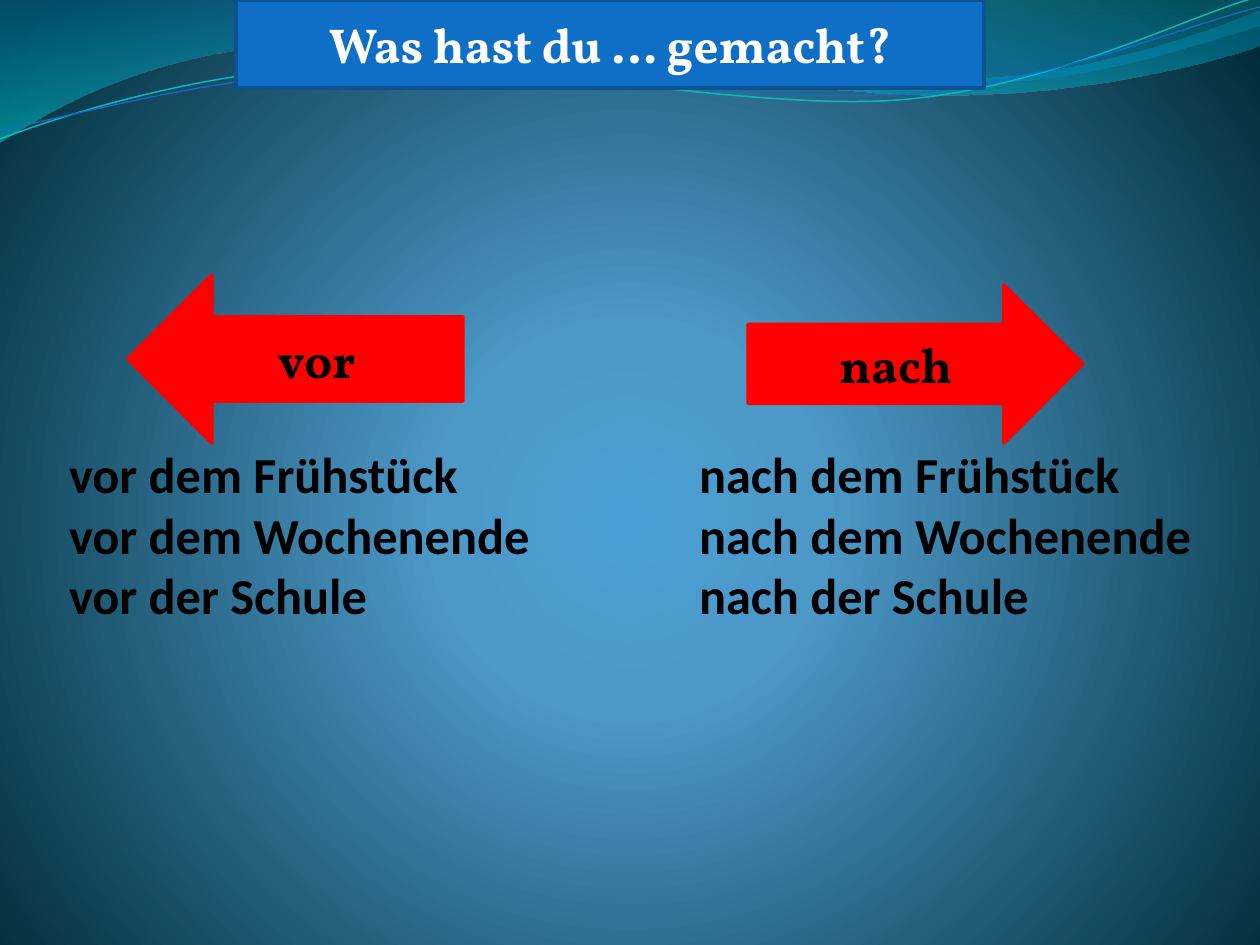
"""Build a German grammar slide: what was done before and after."""
from lxml import etree
from pptx import Presentation
from pptx import util as u
from pptx.dml.color import RGBColor
from pptx.enum import shapes, text
from pptx.oxml.ns import qn

PX = 914400 / 126
WHITE = RGBColor(255, 255, 255)
BLACK = RGBColor(0, 0, 0)
RED = RGBColor(255, 0, 0)
BLUE = RGBColor(0x0F, 0x6F, 0xC6)
NAVY = RGBColor(0x0B, 0x52, 0x92)
TEAL = RGBColor(0x0A, 0xB8, 0xBF)
SKY = RGBColor(0x4A, 0xA0, 0xD6)
MIST = RGBColor(0x4C, 0x98, 0xC7)
DEEP = RGBColor(0x00, 0x2C, 0x38)
SEA = RGBColor(0x00, 0x74, 0xA1)
AQUA = RGBColor(0x00, 0xC6, 0xCF)
JADE = RGBColor(0x00, 0xA1, 0xA9)
AZURE = RGBColor(0x00, 0x8B, 0xBF)

LABEL = {"name": "Vollkorn", "size": u.Pt(28), "bold": True}
BODY = {"name": "Calibri", "size": u.Pt(28.8), "bold": True}
FRAME = {"margin_left": 0, "margin_top": 0, "margin_right": 0,
         "margin_bottom": round(60 * PX), "word_wrap": True,
         "vertical_anchor": text.MSO_ANCHOR.BOTTOM}

WAVES = [
    ([(0, 0), (554, -1), (600, 21, 837, 79, 955, 79),
      (1075, 79, 1207, 33, 1260, 11), (1261, 45),
      (1239, 55, 1096, 96, 940, 95), (784, 95, 481, 35, 324, 43),
      (163, 45, 58, 105, -1, 142)],
     [(0, SEA, 45), (100, AQUA, 55)]),
    ([(604, -1), (641, 14, 859, 78, 969, 82),
      (1079, 87, 1211, 40, 1260, 26), (1260, 0)],
     [(0, JADE, 30), (80, AZURE, 45)]),
]
LINES = [
    ([(0, 139), (60, 116, 199, 71, 349, 65), (498, 58, 747, 111, 898, 100),
      (1050, 88, 1182, 18, 1257, -3)], TEAL, 0.85),
    ([(0, 130), (59, 120, 207, 76, 357, 70), (508, 63, 752, 105, 903, 94),
      (1053, 83, 1185, 25, 1260, 7)], BLUE, 0.75),
]
LABELS = [
    ("RECTANGLE", (236, 0, 748, 88), "Was hast du … gemacht?", BLUE, NAVY, WHITE),
    ("LEFT_ARROW", (128, 275, 335, 168), "vor", RED, RED, BLACK),
    ("RIGHT_ARROW", (748, 285, 335, 158), "nach", RED, RED, BLACK),
]
TIMES = ["dem Frühstück", "dem Wochenende", "der Schule"]


def px(n):
    """Turn pixels into EMU."""
    return round(n * PX)


def put(obj, vals):
    """Set each attribute in a dict."""
    for key, val in vals.items():
        setattr(obj, key, val)


def add(up, tag, **vals):
    """Add a drawing element below another."""
    return etree.SubElement(up, qn("a:" + tag),
                            {key: str(val) for key, val in vals.items()})


def shade(fill, root, stops):
    """Give a fill colour stops and return its emptied gradient element."""
    fill.gradient()
    grad = root.find(".//" + qn("a:gradFill"))
    for kid in list(grad):
        grad.remove(kid)
    row = add(grad, "gsLst")
    for pos, color, alpha in stops:
        stop = add(row, "gs", pos=pos * 1000)
        tint = add(stop, "srgbClr", val=color)
        if alpha < 100:
            add(tint, "alpha", val=alpha * 1000)
    return grad


def glow(slide):
    """Paint the round background gradient."""
    stops = [(0, SKY, 100), (25, MIST, 100), (100, DEEP, 100)]
    grad = shade(slide.background.fill, slide._element, stops)
    ring = add(grad, "path", path="circle")
    add(ring, "fillToRect", l=10000, t=110000, r=10000, b=100000)


def bend(shape, parts):
    """Join each three segments of a curved part into one Bézier."""
    segs = iter(shape._element.findall(".//" + qn("a:lnTo")))
    for part in parts[1:]:
        seg = next(segs)
        if len(part) == 2:
            continue
        curve = etree.Element(qn("a:cubicBezTo"))
        seg.addprevious(curve)
        for leg in (seg, next(segs), next(segs)):
            curve.append(leg[0])
            leg.getparent().remove(leg)


def outline(slide, parts, close):
    """Draw a curved outline."""
    pts = [(px(part[i]), px(part[i + 1]))
           for part in parts for i in range(0, len(part), 2)]
    pen = slide.shapes.build_freeform(*pts[0])
    pen.add_line_segments(pts[1:], close=close)
    shape = pen.convert_to_shape()
    bend(shape, parts)
    shape.shadow.inherit = False
    return shape


def wave(slide, parts, stops):
    """Add a filled wave."""
    shape = outline(slide, parts, True)
    grad = shade(shape.fill, shape._element, stops)
    add(grad, "lin", ang=5400000, scaled=0)
    shape.line.fill.background()


def strand(slide, parts, color, width):
    """Add a thin curved line."""
    shape = outline(slide, parts, False)
    shape.fill.background()
    shape.line.color.rgb = color
    shape.line.width = u.Pt(width)


def label(slide, kind, box, words, fill, edge, ink):
    """Add a shape with centred words."""
    shape = slide.shapes.add_shape(getattr(shapes.MSO_SHAPE, kind), *map(px, box))
    shape.shadow.inherit = False
    shape.fill.solid()
    shape.fill.fore_color.rgb = fill
    shape.line.color.rgb = edge
    shape.line.width = u.Pt(2)
    shape.text_frame.vertical_anchor = text.MSO_ANCHOR.MIDDLE
    para = shape.text_frame.paragraphs[0]
    para.text = words
    para.alignment = text.PP_ALIGN.CENTER
    put(para.runs[0].font, LABEL)
    para.runs[0].font.color.rgb = ink


def phrases(slide):
    """Add the phrases in two columns set by a tab stop."""
    box = slide.shapes.add_textbox(*map(px, (69, 433, 1191, 252)))
    frame = box.text_frame
    put(frame, FRAME)
    para = frame.paragraphs[0]
    para.text = "\v".join(f"vor {time}\tnach {time}" for time in TIMES)
    tabs = add(para._p.get_or_add_pPr(), "tabLst")
    add(tabs, "tab", pos=px(630), algn="l")
    for run in para.runs:
        put(run.font, BODY)
        run.font.color.rgb = BLACK


def main():
    """Build and save the slide."""
    deck = Presentation()
    put(deck, {"slide_width": px(1260), "slide_height": px(945)})
    slide = deck.slides.add_slide(deck.slide_layouts[6])
    glow(slide)
    for item in WAVES:
        wave(slide, *item)
    for item in LINES:
        strand(slide, *item)
    for item in LABELS:
        label(slide, *item)
    phrases(slide)
    deck.save("out.pptx")


if __name__ == "__main__":
    main()
